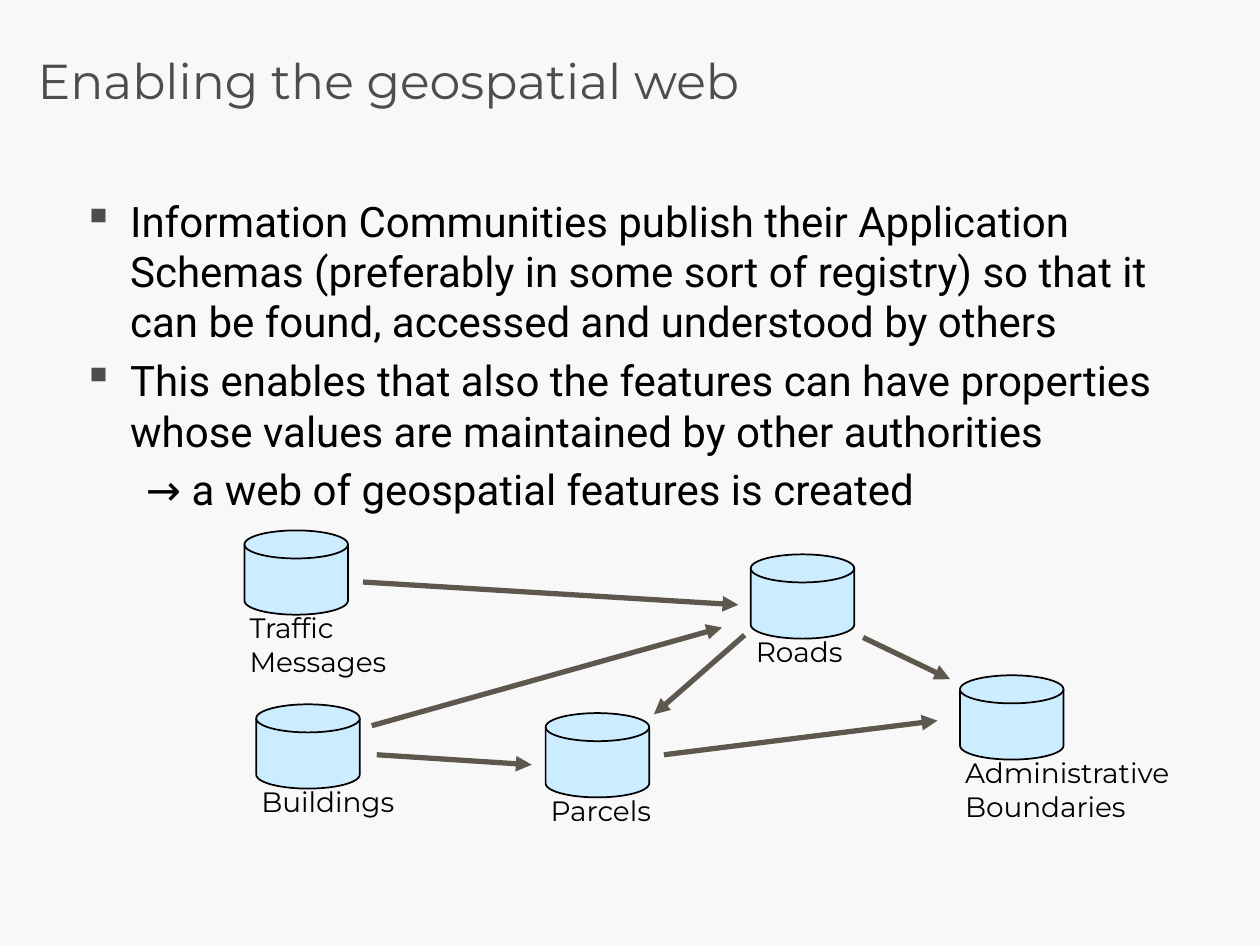
"""Build a slide showing a web of geospatial features linked across registries."""
from lxml import etree
from pptx import Presentation, util as u
from pptx.dml.color import RGBColor
from pptx.enum import shapes, text
from pptx.oxml import ns

COLORS = {"background": "F8F8F8", "title": "4D4D4D", "text": "000000",
          "disk": "CCECFF", "arrow": "5E574E"}
TITLE = "Enabling the geospatial web"
BODY = [
    ("Information Communities publish their Application Schemas (preferably in some sort of "
     "registry) so that it can be found, accessed and understood by others", "▪"),
    ("This enables that also the features can have properties whose values are maintained "
     "by other authorities", "▪"),
    ("→ a web of geospatial features is created", None),
]
INDENTS = {"▪": (27, -27), None: (58.5, -22.5)}
DATABASES = [
    (["Roads"], 429, 316.8, 68.4),
    (["Parcels"], 311.8, 407.5, 80),
    (["Traffic", "Messages"], 139.7, 303.1, 101.5),
    (["Administrative", "Boundaries"], 548.6, 385.9, 142.6),
    (["Buildings"], 146.4, 402.5, 95),
]
ARROWS = [
    ((493.2, 364.3), (542.9, 388.1)),
    ((379.4, 431.3), (535.7, 411.8)),
    ((207.4, 332.6), (421.9, 345.6)),
    ((425.5, 362.9), (373.7, 408.2)),
    ((215.3, 431.3), (303.8, 437)),
    ((212.4, 414.7), (412.6, 358.6)),
]
DISK_WIDTH, DISK_HEIGHT = 59.2, 48.2
LABEL_SHIFT, LABEL_DROP, LABEL_LINE = -4.2, 42.5, 19.5
TITLE_STYLE = {"name": "Montserrat", "size": u.Pt(28)}
BODY_STYLE = {"name": "Roboto", "size": u.Pt(24)}
LABEL_STYLE = {"name": "Montserrat", "size": u.Pt(16)}


def color(name):
    return RGBColor.from_string(COLORS[name])


def add_text(container, box, lines, style, color_name, wrap=True):
    frame = container.add_textbox(*map(u.Pt, box)).text_frame
    frame.word_wrap = wrap
    frame.vertical_anchor = text.MSO_ANCHOR.TOP
    frame.text = "\n".join(lines)
    for paragraph in frame.paragraphs:
        font = paragraph.runs[0].font
        for key, value in style.items():
            setattr(font, key, value)
        font.color.rgb = color(color_name)
    return frame


def format_item(paragraph, bullet):
    paragraph.space_before = u.Pt(4.8)
    properties = paragraph._p.get_or_add_pPr()
    margin, indent = INDENTS[bullet]
    properties.set("marL", str(u.Pt(margin)))
    properties.set("indent", str(u.Pt(indent)))
    if bullet:
        bullet_color = etree.SubElement(properties, ns.qn("a:buClr"))
        etree.SubElement(bullet_color, ns.qn("a:srgbClr"), val=COLORS["title"])
        etree.SubElement(properties, ns.qn("a:buChar"), char=bullet)
    else:
        etree.SubElement(properties, ns.qn("a:buNone"))


def add_database(slide, lines, left, top, label_width):
    group = slide.shapes.add_group_shape().shapes
    disk = group.add_shape(shapes.MSO_SHAPE.FLOWCHART_MAGNETIC_DISK,
                           *map(u.Pt, (left, top, DISK_WIDTH, DISK_HEIGHT)))
    disk.shadow.inherit = False
    disk.fill.solid()
    disk.fill.fore_color.rgb = color("disk")
    disk.line.color.rgb = color("text")
    disk.line.width = u.Pt(1)
    box = (left + LABEL_SHIFT, top + LABEL_DROP, label_width, 7.2 + LABEL_LINE * len(lines))
    add_text(group, box, lines, LABEL_STYLE, "text", wrap=False)


def add_arrow(slide, start, end):
    arrow = slide.shapes.add_connector(shapes.MSO_CONNECTOR.STRAIGHT, *map(u.Pt, start + end))
    arrow.line.color.rgb = color("arrow")
    arrow.line.width = u.Pt(3)
    etree.SubElement(arrow.line._get_or_add_ln(), ns.qn("a:tailEnd"), type="triangle")
    etree.SubElement(arrow._element.spPr, ns.qn("a:effectLst"))


def main():
    presentation = Presentation()
    presentation.slide_width, presentation.slide_height = u.Pt(720), u.Pt(540)
    slide = presentation.slides.add_slide(presentation.slide_layouts[6])
    slide.background.fill.solid()
    slide.background.fill.fore_color.rgb = color("background")

    add_text(slide.shapes, (14.4, 25.2, 653.8, 72), [TITLE], TITLE_STYLE, "title")
    body = add_text(slide.shapes, (40.3, 108, 643.7, 347.8),
                    [line for line, _ in BODY], BODY_STYLE, "text")
    for paragraph, (_, bullet) in zip(body.paragraphs, BODY):
        format_item(paragraph, bullet)
    for database in DATABASES:
        add_database(slide, *database)
    for start, end in ARROWS:
        add_arrow(slide, start, end)
    presentation.save("out.pptx")


if __name__ == "__main__":
    main()
